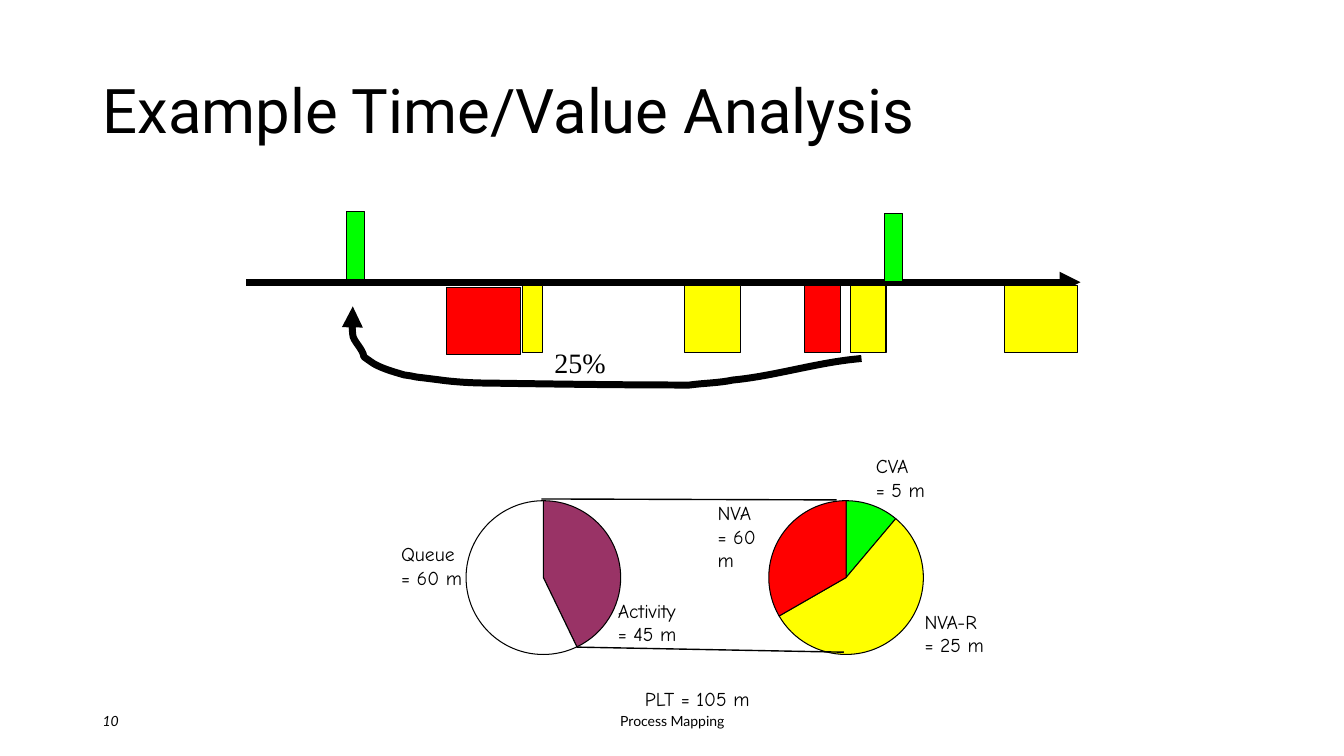
import math

import pptx
import pptx.dml.color
import pptx.enum.shapes
import pptx.enum.text
import pptx.oxml.ns
import pptx.util
from lxml import etree

RGBColor = pptx.dml.color.RGBColor
BLACK = RGBColor(0x00, 0x00, 0x00)
WHITE = RGBColor(0xFF, 0xFF, 0xFF)
GREEN = RGBColor(0x00, 0xFF, 0x00)
YELLOW = RGBColor(0xFF, 0xFF, 0x00)
RED = RGBColor(0xFF, 0x00, 0x00)
PLUM = RGBColor(0x99, 0x33, 0x66)

ANCHOR = pptx.enum.text.MSO_ANCHOR
ALIGN = pptx.enum.text.PP_ALIGN
qn = pptx.oxml.ns.qn

# The slide is a grid of 100 columns by 100 rows
WIDTH = pptx.util.Inches(13.33)
HEIGHT = pptx.util.Inches(7.5)

TITLE = {"name": "Roboto", "size": pptx.util.Pt(44)}
FOOTER = {"name": "Lato", "size": pptx.util.Pt(10)}
PAGE = {**FOOTER, "italic": True}
SHARE = {"name": "Times New Roman", "size": pptx.util.Pt(20)}
LABEL = {"name": "Comic Neue", "size": pptx.util.Pt(14)}

# Timeline steps: left, top, width, colour, outline in points
STEP_HEIGHT = 8.93
STEPS = [
    (25.8, 28, 1.35, GREEN, 0.75),
    (33.23, 38, 5.48, RED, 1),
    (38.85, 37.73, 1.55, YELLOW, 0.75),
    (50.93, 37.73, 4.2, YELLOW, 0.75),
    (59.87, 37.73, 2.65, RED, 1),
    (63.3, 37.73, 2.63, YELLOW, 0.75),
    (65.82, 28.27, 1.35, GREEN, 0.75),
    (74.73, 37.73, 5.48, YELLOW, 0.75),
]

# Rework loop: a start, then two handles and an end for each curve
REWORK = [
    (63.84, 47.47),
    (60.68, 48), (57.67, 49.73), (54.53, 50.27),
    (53.48, 50.67), (52.35, 50.67), (51.3, 50.93),
    (46.2, 50.93), (41.17, 50.8), (36.15, 50.67),
    (35.17, 50.67), (33.83, 50.53), (32.78, 50.27),
    (32.17, 50.13), (31.57, 50), (30.97, 49.87),
    (30.67, 49.73), (30.08, 49.6), (30.08, 49.6),
    (29.33, 49.2), (28.5, 48.8), (27.83, 48.13),
    (27.6, 47.87), (27.08, 47.2), (27.08, 47.2),
    (27, 46.13), (26.25, 45.07), (26.25, 44.27),
    (26.18, 43.07), (26.25, 41.87), (26.25, 40.53),
]

# Pies: centre column, then minutes and colour clockwise from the top
PIE_ROW = 76.4
RADIUS_COLS, RADIUS_ROWS = 5.75, 10.17
PIES = [
    (40.43, [(45, PLUM), (60, WHITE)]),
    (62.95, [(5, GREEN), (25, YELLOW), (15, RED)]),
]
PIE_LINKS = [
    (42.9, 85.6, 62.78, 86.27),
    (40.28, 66, 62.25, 66.13),
]
LABELS = [
    (["Queue", "= 60 m"], (29.1, 71.07, 6.3, 7.6)),
    (["Activity", "= 45 m"], (45.23, 78.53, 7.43, 7.6)),
    (["CVA", "= 5 m"], (64.43, 59.4, 5.25, 7.6)),
    (["NVA-R", "= 25 m"], (68.05, 80, 6.68, 7.6)),
    (["NVA", "= 60 m"], (52.65, 65.6, 6, 7.6)),
    (["PLT = 105 m"], (47.25, 90.27, 9.75, 4.4)),
]


def col(number):
    return round(WIDTH * number / 100)


def row(number):
    return round(HEIGHT * number / 100)


def box(left, top, width, height):
    return col(left), row(top), col(width), row(height)


def style_line(item, points, arrow=False):
    item.line.color.rgb = BLACK
    item.line.width = pptx.util.Pt(points)
    if arrow:
        outline = item.line._get_or_add_ln()
        outline.set("cap", "sq")
        etree.SubElement(outline, qn("a:tailEnd"), type="triangle")


def add_text(slide, lines, area, font, align=ALIGN.LEFT, anchor=ANCHOR.TOP,
             spacing=None):
    frame = slide.shapes.add_textbox(*box(*area)).text_frame
    frame.word_wrap = True
    frame.vertical_anchor = anchor
    for index, line in enumerate(lines):
        paragraph = frame.add_paragraph() if index else frame.paragraphs[0]
        paragraph.alignment = align
        paragraph.line_spacing = spacing
        run = paragraph.add_run()
        run.text = line
        for key, value in font.items():
            setattr(run.font, key, value)
        run.font.color.rgb = BLACK


def add_line(slide, start_col, start_row, end_col, end_row, points, arrow=False):
    line = slide.shapes.add_connector(
        pptx.enum.shapes.MSO_CONNECTOR.STRAIGHT,
        col(start_col), row(start_row), col(end_col), row(end_row))
    style_line(line, points, arrow)
    etree.SubElement(line._element.spPr, qn("a:effectLst"))


def fill_shape(shape, colour, points):
    shape.shadow.inherit = False
    shape.fill.solid()
    shape.fill.fore_color.rgb = colour
    style_line(shape, points)


def add_step(slide, left, top, width, colour, points):
    step = slide.shapes.add_shape(pptx.enum.shapes.MSO_SHAPE.RECTANGLE,
                                  *box(left, top, width, STEP_HEIGHT))
    fill_shape(step, colour, points)


def add_curves(slide, points, straight=0, closed=False):
    """Draw some straight segments, then one curve for every three points."""
    corners = [(col(x), row(y)) for x, y in points]
    builder = slide.shapes.build_freeform(*corners[0])
    builder.add_line_segments(corners[1:], close=closed)
    outline = builder.convert_to_shape()
    segments = list(outline._element.iter(qn("a:lnTo")))[straight:]
    for first in range(0, len(segments), 3):
        curve = etree.Element(qn("a:cubicBezTo"))
        segments[first].addprevious(curve)
        for segment in segments[first:first + 3]:
            curve.append(segment[0])
            segment.getparent().remove(segment)
    return outline


def add_rework(slide):
    loop = add_curves(slide, REWORK)
    loop.shadow.inherit = False
    loop.fill.background()
    style_line(loop, 5, arrow=True)


def rim_point(centre, angle, lean=0):
    """Point on the rim, moved along the tangent by a share of the radius."""
    across = math.sin(angle) + lean * math.cos(angle)
    down = lean * math.sin(angle) - math.cos(angle)
    return centre + RADIUS_COLS * across, PIE_ROW + RADIUS_ROWS * down


def add_pie(slide, centre, slices):
    total = sum(minutes for minutes, _ in slices)
    elapsed = 0
    for minutes, colour in slices:
        begin, end = elapsed / total, (elapsed + minutes) / total
        turns = [begin] + [q / 4 for q in range(1, 4) if begin < q / 4 < end] + [end]
        angles = [math.tau * turn for turn in turns]
        points = [(centre, PIE_ROW), rim_point(centre, angles[0])]
        for start, stop in zip(angles, angles[1:]):
            lean = 4 / 3 * math.tan((stop - start) / 4)
            points += [rim_point(centre, start, lean),
                       rim_point(centre, stop, -lean), rim_point(centre, stop)]
        wedge = add_curves(slide, points, straight=1, closed=True)
        fill_shape(wedge, colour, 0.75)
        elapsed += minutes


def main():
    deck = pptx.Presentation()
    deck.slide_width, deck.slide_height = WIDTH, HEIGHT
    slide = deck.slides.add_slide(deck.slide_layouts[6])

    # Footer and title
    add_text(slide, ["10"], (6.9, 92.67, 22.5, 5.33), PAGE, anchor=ANCHOR.MIDDLE)
    add_text(slide, ["Process Mapping"], (33.15, 92.67, 33.75, 5.33), FOOTER,
             ALIGN.CENTER, ANCHOR.MIDDLE)
    add_text(slide, ["Example Time/Value Analysis"], (6.9, 5.33, 86.25, 19.33),
             TITLE, anchor=ANCHOR.MIDDLE, spacing=0.9)

    # Timeline with its rework loop
    add_line(slide, 18.53, 37.33, 80.4, 37.33, 5, arrow=True)
    add_rework(slide)
    add_text(slide, ["25%"], (40.5, 45.07, 5.33, 5.73), SHARE, ALIGN.CENTER)
    for step in STEPS:
        add_step(slide, *step)

    # Pies, the lines between them and their labels
    for centre, slices in PIES:
        add_pie(slide, centre, slices)
    for link in PIE_LINKS:
        add_line(slide, *link, 1)
    for lines, area in LABELS:
        add_text(slide, lines, area, LABEL)

    deck.save("out.pptx")


if __name__ == "__main__":
    main()
